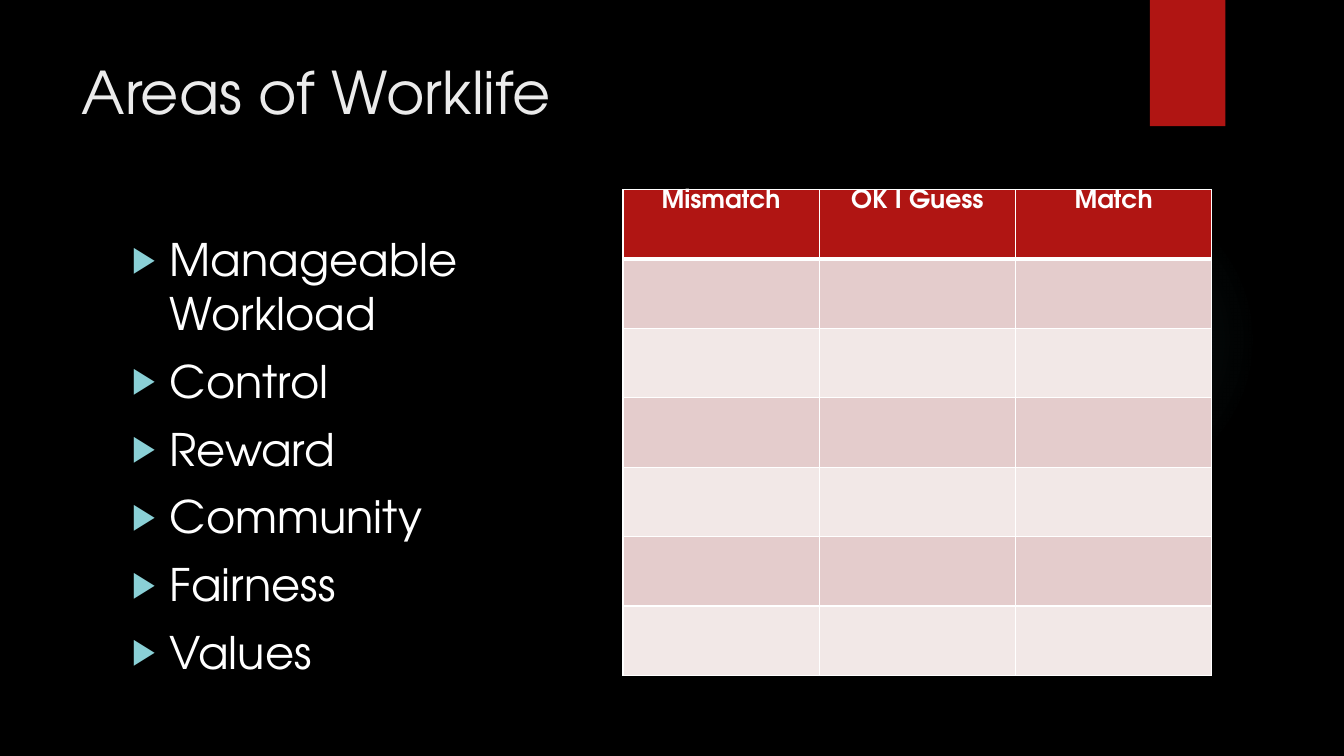
from lxml import etree
from pptx import Presentation
from pptx.dml.color import RGBColor
from pptx.enum.shapes import MSO_SHAPE
from pptx.enum.text import MSO_ANCHOR, MSO_AUTO_SIZE, PP_ALIGN
from pptx.oxml import parse_xml
from pptx.oxml.ns import qn
from pptx.util import Cm, Pt

FONT = "TeX Gyre Adventor"
BLACK = RGBColor(0x00, 0x00, 0x00)
WHITE = RGBColor(0xFF, 0xFF, 0xFF)
TITLE_GREY = RGBColor(0xEB, 0xEB, 0xEB)
RED = RGBColor(0xB0, 0x15, 0x13)
TEAL = RGBColor(0x50, 0xB9, 0xC1)
BULLET_TEAL = RGBColor(0x8A, 0xD0, 0xD6)
BANDS = (RGBColor(0xE4, 0xCC, 0xCC), RGBColor(0xF2, 0xE8, 0xE7))

RECTANGLE, OVAL = MSO_SHAPE.RECTANGLE, MSO_SHAPE.OVAL
TOP, LEFT, CENTER = MSO_ANCHOR.TOP, PP_ALIGN.LEFT, PP_ALIGN.CENTER
NO_AUTOFIT = MSO_AUTO_SIZE.NONE

AREAS = ("Manageable Workload", "Control", "Reward", "Community", "Fairness", "Values")
RATINGS = ("Mismatch", "OK I Guess", "Match")
GLOW_STOPS = ((0, 7), (36, 6), (69, 0))  # position and opacity in percent


def set_font(font, size, color, bold=False):
    font.name, font.size, font.bold = FONT, Pt(size), bold
    font.color.rgb = color


def place(shape, box):
    shape.left, shape.top, shape.width, shape.height = (Cm(length) for length in box)


def add_plain_shape(page, kind, box):
    shape = page.shapes.add_shape(kind, *(Cm(length) for length in box))
    shape.shadow.inherit = False
    shape.line.fill.background()
    return shape


def add_glow(page, box):
    """Faint round light behind the table."""
    glow = add_plain_shape(page, OVAL, box)
    glow.fill.background()
    properties = glow.element.spPr
    gradient = etree.Element(qn("a:gradFill"))
    stops = etree.SubElement(gradient, qn("a:gsLst"))
    for position, opacity in GLOW_STOPS:
        stop = etree.SubElement(stops, qn("a:gs"), pos=str(position * 1000))
        color = etree.SubElement(stop, qn("a:srgbClr"), val=str(TEAL))
        etree.SubElement(color, qn("a:alpha"), val=str(opacity * 1000))
    circle = etree.SubElement(gradient, qn("a:path"), path="circle")
    etree.SubElement(circle, qn("a:fillToRect"), l="50000", t="50000", r="50000", b="50000")
    properties.replace(properties.find(qn("a:noFill")), parse_xml(etree.tostring(gradient)))


def add_ribbon(page, box):
    ribbon = add_plain_shape(page, RECTANGLE, box)
    ribbon.fill.solid()
    ribbon.fill.fore_color.rgb = RED


def fill_title(title, box):
    place(title, box)
    frame = title.text_frame
    frame.text = "Areas of Worklife"
    frame.vertical_anchor, frame.auto_size = TOP, NO_AUTOFIT
    para = frame.paragraphs[0]
    para.alignment = LEFT
    set_font(para.runs[0].font, 42, TITLE_GREY)


def add_bullet(para):
    properties = para._p.get_or_add_pPr()
    properties.set("marL", str(Cm(0.95)))
    properties.set("indent", str(-Cm(0.95)))
    color = etree.SubElement(properties, qn("a:buClr"))
    etree.SubElement(color, qn("a:srgbClr"), val=str(BULLET_TEAL))
    etree.SubElement(properties, qn("a:buSzPct"), val="80000")
    etree.SubElement(properties, qn("a:buChar"), char="▶")


def fill_areas(body, box):
    place(body, box)
    frame = body.text_frame
    frame.text = "\n".join(AREAS)
    frame.vertical_anchor, frame.auto_size = TOP, NO_AUTOFIT
    for index, para in enumerate(frame.paragraphs):
        add_bullet(para)
        para.space_before = Pt(10 if index else 0)
        set_font(para.runs[0].font, 32, WHITE)


def add_borders(cell, top, bottom):
    properties = cell._tc.get_or_add_tcPr()
    for side, width in (("lnL", 1), ("lnR", 1), ("lnT", top), ("lnB", bottom)):
        line = etree.SubElement(properties, qn(f"a:{side}"), w=str(Pt(width)))
        fill = etree.SubElement(line, qn("a:solidFill"))
        etree.SubElement(fill, qn("a:srgbClr"), val=str(WHITE))


def add_rating_table(page, box):
    """Header of ratings above one empty row for each area."""
    row_count = len(AREAS) + 1
    lengths = (Cm(length) for length in box)
    table = page.shapes.add_table(row_count, len(RATINGS), *lengths).table
    for row_index, row in enumerate(table.rows):
        for cell in row.cells:
            add_borders(cell, top=3 if row_index == 1 else 1, bottom=1 if row_index else 3)
            cell.fill.solid()
            cell.fill.fore_color.rgb = BANDS[(row_index - 1) % 2] if row_index else RED
    for cell, rating in zip(table.rows[0].cells, RATINGS):
        cell.text = rating
        cell.margin_top = 0
        cell.vertical_anchor = TOP
        para = cell.text_frame.paragraphs[0]
        para.alignment = CENTER
        set_font(para.runs[0].font, 18, WHITE, bold=True)


def build_worklife_page(deck):
    page = deck.slides.add_slide(deck.slide_layouts[1])
    page.background.fill.solid()
    page.background.fill.fore_color.rgb = BLACK
    # Decoration
    add_glow(page, (23.9, 4.65, 7.82, 7.82))
    add_ribbon(page, (28.98, 0, 1.9, 3.18))
    # Title and list
    fill_title(page.shapes.title, (1.8, 1.27, 26.14, 3.89))
    fill_areas(page.placeholders[1], (3.07, 5.72, 12.22, 11.66))
    # Ratings
    add_rating_table(page, (15.7, 4.78, 14.84, 12.24))


def main():
    deck = Presentation()
    deck.slide_width, deck.slide_height = Cm(33.87), Cm(19.05)
    build_worklife_page(deck)
    deck.save("out.pptx")


if __name__ == "__main__":
    main()
